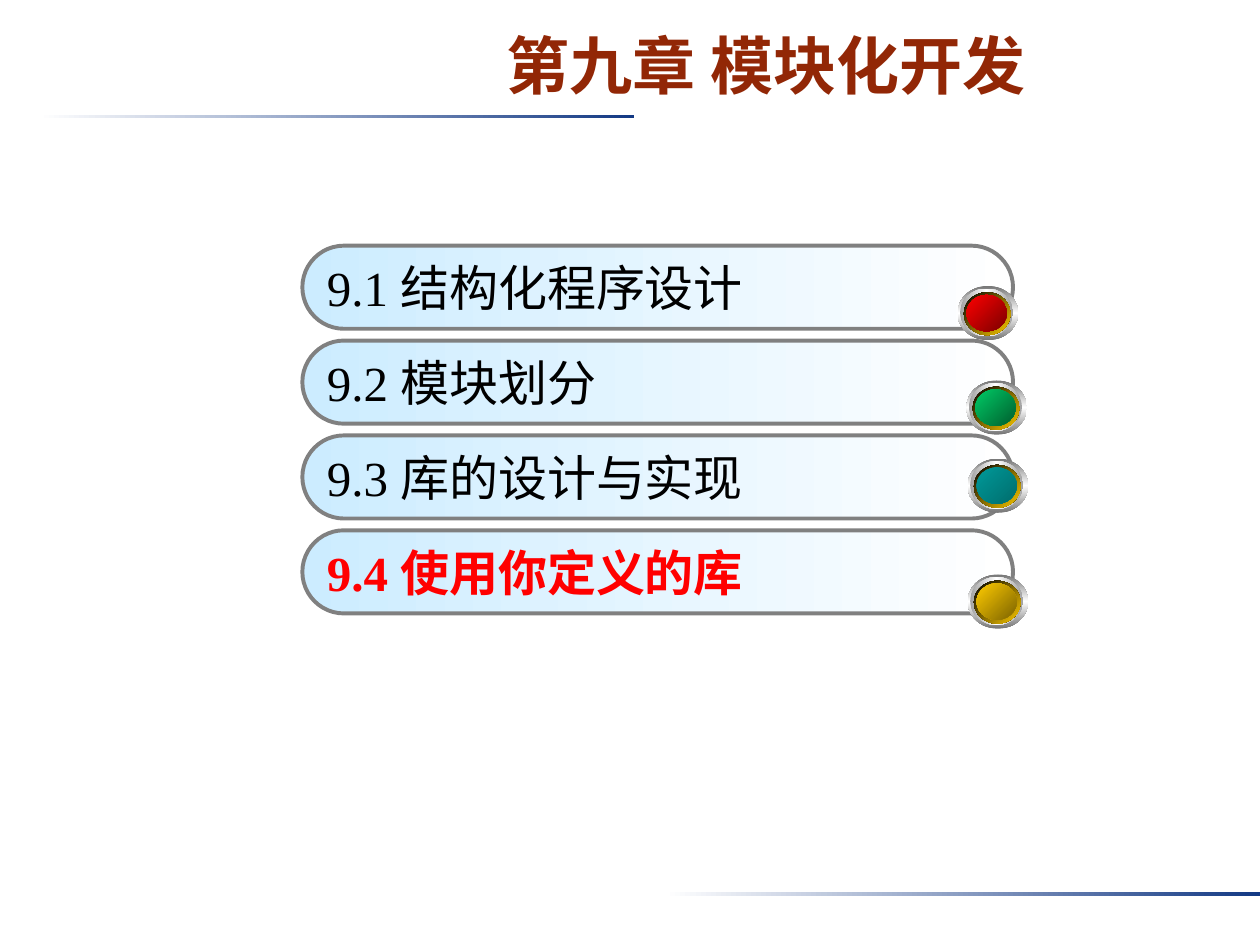
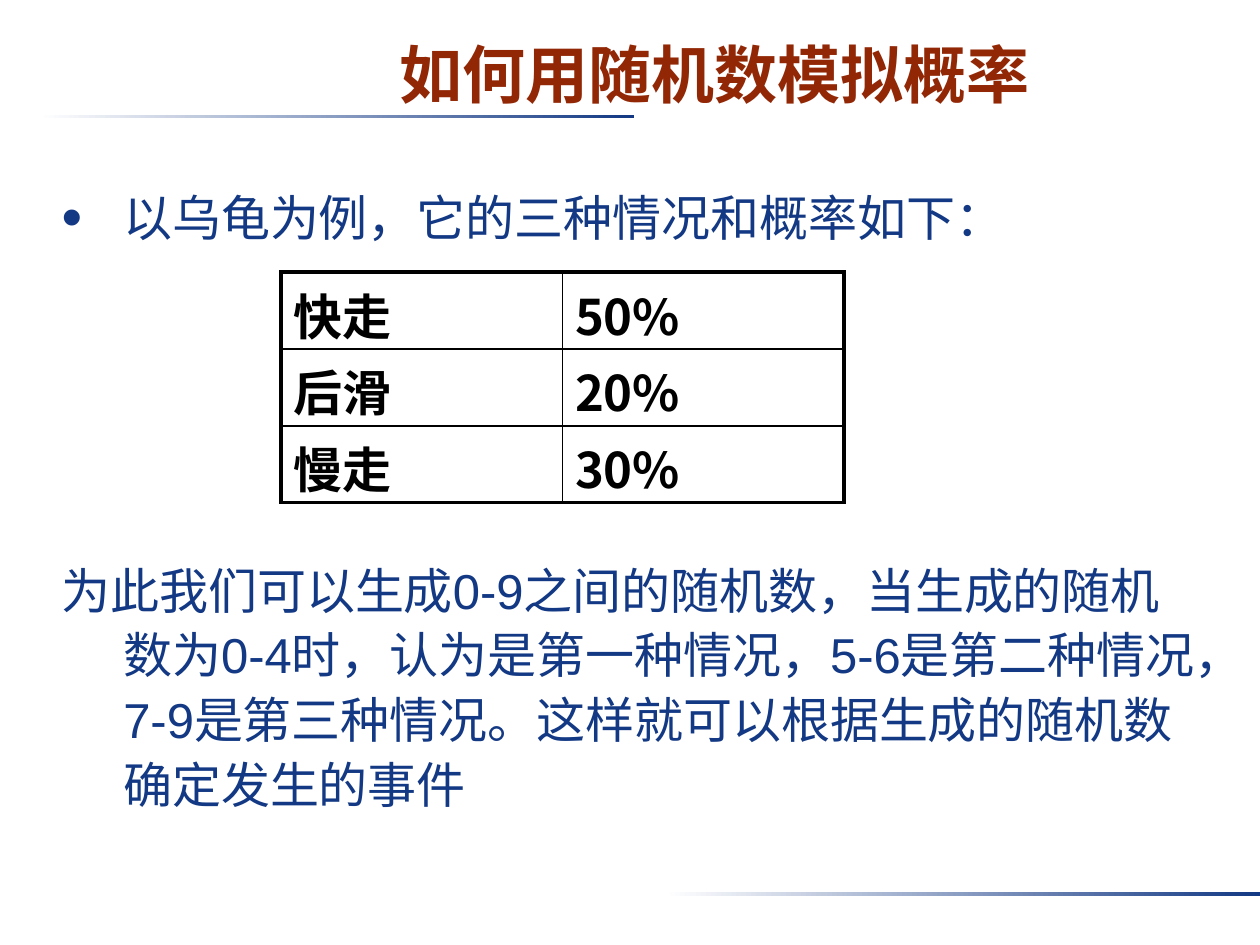
"""Build two slides on modular development and simulated probability."""
from lxml import etree
from pptx import Presentation
from pptx.dml.color import RGBColor
from pptx.enum.shapes import MSO_SHAPE
from pptx.enum.text import MSO_ANCHOR, PP_ALIGN
from pptx.oxml.ns import qn
from pptx.util import Inches, Pt

RECT, PILL, OVAL = MSO_SHAPE.RECTANGLE, MSO_SHAPE.ROUNDED_RECTANGLE, MSO_SHAPE.OVAL
LEFT, CENTER = PP_ALIGN.LEFT, PP_ALIGN.CENTER
TOP, MIDDLE = MSO_ANCHOR.TOP, MSO_ANCHOR.MIDDLE

WHITE = RGBColor(0xFF, 0xFF, 0xFF)
BLACK = RGBColor(0x00, 0x00, 0x00)
NAVY = RGBColor(0x13, 0x39, 0x84)
BROWN = RGBColor(0x92, 0x27, 0x06)
RED = RGBColor(0xFF, 0x00, 0x00)
DARK_RED = RGBColor(0x7C, 0x00, 0x00)
GREEN = RGBColor(0x00, 0xCC, 0x66)
DARK_GREEN = RGBColor(0x00, 0x5E, 0x2F)
TEAL = RGBColor(0x00, 0x99, 0x99)
DARK_TEAL = RGBColor(0x00, 0x6D, 0x6D)
GOLD = RGBColor(0xFF, 0xCC, 0x00)
DARK_GOLD = RGBColor(0x7C, 0x63, 0x00)
SKY = RGBColor(0xCC, 0xEC, 0xFF)
GREY = RGBColor(0x80, 0x80, 0x80)
RIM = RGBColor(0x76, 0x76, 0x76)
BEVEL = RGBColor(0xA2, 0xA2, 0xA2)

SANS, SERIF, CJK = "Arial", "Times New Roman", "Noto Sans CJK SC"
COLUMNS, ROWS = 100, 75


def write(paragraph, text, size=28, color=NAVY, font=SANS, bold=False, align=LEFT,
          bullet=None, hanging=0, leading=None, before=None):
    properties = paragraph._p.get_or_add_pPr()
    if hanging:
        properties.set("marL", str(Inches(hanging)))
        properties.set("indent", str(-Inches(hanging)))
    if bullet:
        etree.SubElement(properties, qn("a:buSzPct"), val="120000")
        etree.SubElement(properties, qn("a:buFont"), typeface=SANS)
        etree.SubElement(properties, qn("a:buChar"), char=bullet)
    paragraph.alignment = align
    if leading:
        paragraph.line_spacing = Pt(leading)
    if before:
        paragraph.space_before = Pt(before)
    run = paragraph.add_run()
    run.text = text
    run.font.size, run.font.bold = Pt(size), bold
    run.font.color.rgb = color
    run.font.name = font
    etree.SubElement(run._r.get_or_add_rPr(), qn("a:ea"), typeface=CJK)


class Deck:
    """Hold the deck style, its grid and the current slide."""

    def __init__(self):
        self.file = Presentation()
        self.file.slide_width, self.file.slide_height = Inches(10), Inches(7.5)
        self.slide = None

    def place(self, left, top, width, height):
        column = self.file.slide_width / COLUMNS
        row = self.file.slide_height / ROWS
        return [round(v) for v in (left * column, top * row, width * column, height * row)]

    def page(self, heading, *area):
        self.slide = self.file.slides.add_slide(self.file.slide_layouts[6])
        for left, top in ((3.1, 9.1), (52.8, 70.8)):
            self.shape(RECT, (left, top, 47.2, 0.3), (WHITE, NAVY))
        frame = self.text(area, MIDDLE)
        frame.margin_top = Inches(0.06)
        write(frame.paragraphs[0], heading, size=36, color=BROWN, bold=True, align=CENTER)

    def text(self, area, anchor=TOP):
        frame = self.slide.shapes.add_textbox(*self.place(*area)).text_frame
        frame.word_wrap = True
        frame.vertical_anchor = anchor
        return frame

    def shape(self, kind, area, colors, angle=0, outline=None):
        shape = self.slide.shapes.add_shape(kind, *self.place(*area))
        shape.shadow.inherit = False
        shape.fill.gradient()
        shape.fill.gradient_angle = -angle % 360
        stops = shape._element.spPr.find(qn("a:gradFill")).find(qn("a:gsLst"))
        stops.clear()
        for index, color in enumerate(colors):
            position = 100000 * index // (len(colors) - 1)
            stop = etree.SubElement(stops, qn("a:gs"), pos=str(position))
            etree.SubElement(stop, qn("a:srgbClr"), val=str(color))
        if outline:
            shape.line.color.rgb, shape.line.width = outline, Pt(2.25)
        else:
            shape.line.fill.background()
        return shape

    def section(self, top, label, color, bold):
        bar = self.shape(PILL, (24, top, 56.4, 6.6), (SKY, WHITE), outline=GREY)
        bar.adjustments[0] = 0.5
        bar.text_frame.vertical_anchor = MIDDLE
        write(bar.text_frame.paragraphs[0], label, color=color, font=SERIF, bold=bold)

    def knob(self, left, top, light, dark):
        layers = ((0, 4.8, 4.3, (RIM, WHITE, RIM), 90),
                  (0.2, 4.2, 3.8, (BEVEL, WHITE, BEVEL), 0),
                  (0.5, 3.7, 3.4, (BLACK, GOLD), 45),
                  (0.7, 3.2, 2.9, (light, dark), 45))
        for inset, width, height, colors, angle in layers:
            self.shape(OVAL, (left + inset, top + inset, width, height), colors, angle)

    def table(self, area, rows):
        last_row, last_column = len(rows) - 1, len(rows[0]) - 1
        grid = self.slide.shapes.add_table(len(rows), len(rows[0]), *self.place(*area)).table
        grid.first_row = grid.horz_banding = False
        for r, row in enumerate(rows):
            for c, value in enumerate(row):
                cell = grid.cell(r, c)
                cell.fill.background()
                write(cell.text_frame.paragraphs[0], value, color=BLACK, font=CJK, bold=True)
                self.borders(cell, L=c == 0, R=c == last_column, T=r == 0, B=r == last_row)

    def borders(self, cell, **outer_sides):
        properties = cell._tc.get_or_add_tcPr()
        for index, (side, outer) in enumerate(outer_sides.items()):
            line = etree.Element(qn(f"a:ln{side}"), w=str(Pt(2.25 if outer else 1)))
            fill = etree.SubElement(line, qn("a:solidFill"))
            etree.SubElement(fill, qn("a:srgbClr"), val=str(BLACK))
            properties.insert(index, line)


def contents(deck):
    deck.page("第九章 模块化开发", 24, 1.3, 73.6, 7.5)
    sections = (("9.1 结构化程序设计", 76, 22.7, RED, DARK_RED),
                ("9.2 模块划分", 76.7, 30.2, GREEN, DARK_GREEN),
                ("9.3 库的设计与实现", 76.8, 36.4, TEAL, DARK_TEAL),
                ("9.4 使用你定义的库", 76.8, 45.6, GOLD, DARK_GOLD))
    current = len(sections) - 1
    for index in reversed(range(len(sections))):
        label, left, top, light, dark = sections[index]
        active = index == current
        deck.section(19.5 + 7.53 * index, label, RED if active else BLACK, active)
        deck.knob(left, top, light, dark)


def probability(deck):
    deck.page("如何用随机数模拟概率", 13.4, 2, 86.6, 7.5)
    body = deck.text((3.9, 13.2, 92, 53.3))
    body.margin_top = Inches(0.12)
    write(body.paragraphs[0], "以乌龟为例，它的三种情况和概率如下：",
          bullet="•", hanging=0.49, leading=37)
    write(body.add_paragraph(),
          "为此我们可以生成0-9之间的随机数，当生成的随机数为0-4时，认为是第一种情况，"
          "5-6是第二种情况，7-9是第三种情况。这样就可以根据生成的随机数确定发生的事件",
          hanging=0.49, leading=37, before=176)
    deck.table((22.3, 21.6, 44.7, 18.3),
               (("快走", "50%"), ("后滑", "20%"), ("慢走", "30%")))


def main():
    deck = Deck()
    contents(deck)
    probability(deck)
    deck.file.save("out.pptx")


if __name__ == "__main__":
    main()
